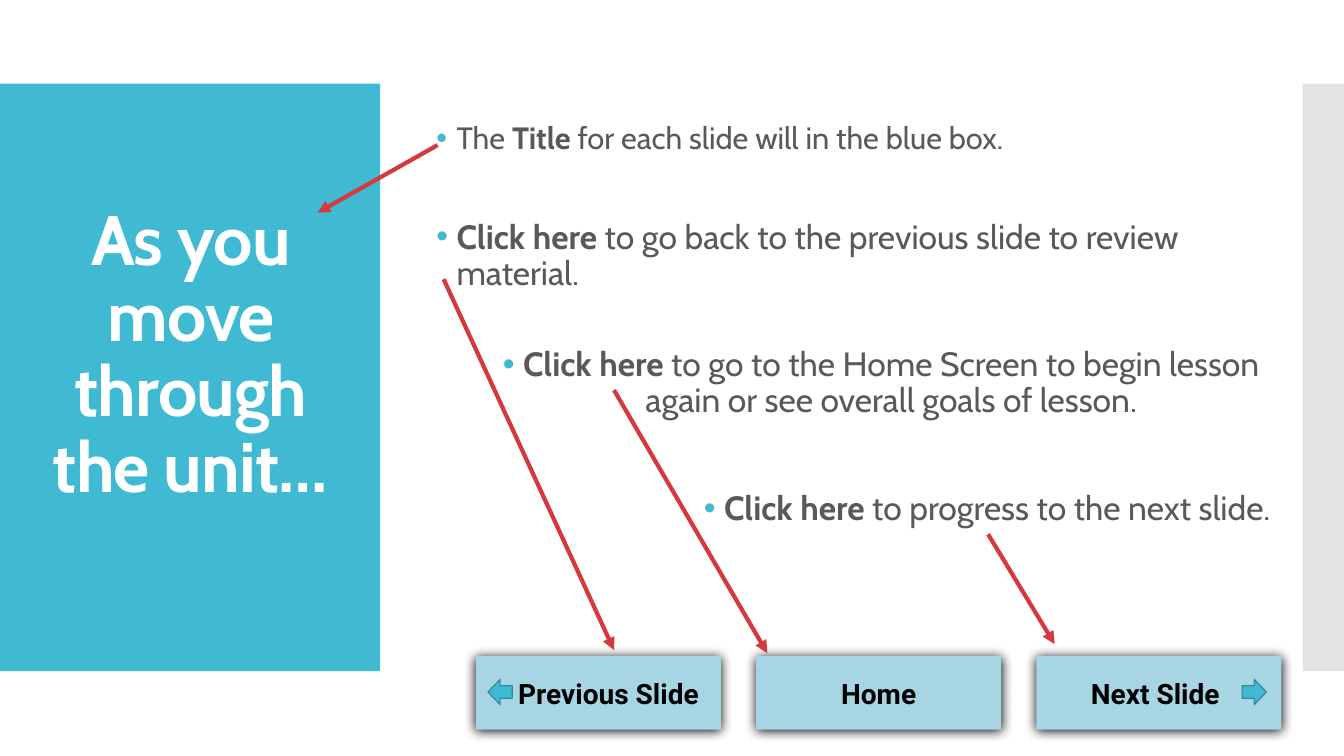
import dataclasses

import pptx
import pptx.dml.color
import pptx.enum.shapes
import pptx.enum.text
import pptx.oxml
import pptx.oxml.ns
import pptx.util

PX = 9144
KIND = pptx.enum.shapes.MSO_SHAPE
ALIGN = pptx.enum.text.PP_ALIGN
MID = pptx.enum.text.MSO_ANCHOR.MIDDLE
NS = pptx.oxml.ns.nsdecls("a")


@dataclasses.dataclass(frozen=True)
class Theme:
    blue: str = "40BAD2"
    gray: str = "C8C8C8"
    pale: str = "A7D5E3"
    edge: str = "2F8A9B"
    red: str = "D5393D"
    white: str = "FFFFFF"
    ink: str = "595959"
    black: str = "000000"
    font: str = "Cabin"
    label: str = "Roboto"
    title: int = 50
    lead: int = 22
    body: int = 24
    button: int = 20


THEME = Theme()


def px(*nums):
    return [pptx.util.Emu(num * PX) for num in nums]


def color(code):
    return pptx.dml.color.RGBColor.from_string(code)


def xml(text):
    return pptx.oxml.parse_xml(text)


def add_shape(slide, kind, box, fill):
    shape = slide.shapes.add_shape(kind, *px(*box))
    shape.shadow.inherit = False
    shape.fill.solid()
    shape.fill.fore_color.rgb = color(fill)
    shape.line.fill.background()
    return shape


def set_frame(shape, left=10, right=10):
    frame = shape.text_frame
    frame.word_wrap = True
    frame.vertical_anchor = MID
    frame.margin_left, frame.margin_right = px(left, right)
    frame.margin_top, frame.margin_bottom = px(5, 5)
    return frame


def add_run(para, text, size, font, ink, bold):
    run = para.add_run()
    run.text = text
    run.font.size = pptx.util.Pt(size)
    run.font.name = font
    run.font.bold = bold
    run.font.color.rgb = color(ink)
    return run


def add_title(slide, box, text):
    left, top, wide, high = box
    add_shape(slide, KIND.RECTANGLE, box, THEME.blue)
    area = (left + 28, top + 19, wide - 55, high - 80)
    frame = set_frame(slide.shapes.add_textbox(*px(*area)))
    para = frame.paragraphs[0]
    para.alignment = ALIGN.CENTER
    para.line_spacing = 0.9
    run = add_run(para, text, THEME.title, THEME.font, THEME.white, True)
    run._r.get_or_add_rPr().set("spc", "-60")


def add_strip(slide, box):
    strip = add_shape(slide, KIND.RECTANGLE, box, THEME.gray)
    tint = strip._element.spPr.find(".//" + pptx.oxml.ns.qn("a:srgbClr"))
    tint.append(xml(f'<a:alpha {NS} val="50000"/>'))


def add_bullet(para, indent):
    props = para._p.get_or_add_pPr()
    props.set("marL", str(indent * PX))
    props.set("indent", str(-20 * PX))
    props.append(xml(f'<a:buClr {NS}><a:srgbClr val="{THEME.blue}"/></a:buClr>'))
    props.append(xml(f'<a:buFont {NS} typeface="Arial"/>'))
    props.append(xml(f'<a:buChar {NS} char="•"/>'))


def add_body(slide, box, items):
    frame = set_frame(slide.shapes.add_textbox(*px(*box)))
    for num, (align, indent, gap, size, parts) in enumerate(items):
        para = frame.add_paragraph() if num else frame.paragraphs[0]
        para.alignment = align
        para.line_spacing = 0.9
        para.space_before = pptx.util.Pt(gap)
        add_bullet(para, indent)
        for text, bold in parts:
            add_run(para, text, size, THEME.font, THEME.ink, bold)


def add_button(slide, box, text, left, right):
    shape = add_shape(slide, KIND.RECTANGLE, box, THEME.pale)
    glow = shape._element.spPr.find(pptx.oxml.ns.qn("a:effectLst"))
    glow.append(xml(
        f'<a:outerShdw {NS} blurRad="107950" dist="12700" dir="5400000" '
        f'algn="ctr" rotWithShape="0"><a:srgbClr val="{THEME.black}"/>'
        '</a:outerShdw>'))
    para = set_frame(shape, left, right).paragraphs[0]
    para.alignment = ALIGN.CENTER
    add_run(para, text, THEME.button, THEME.label, THEME.black, True)


def add_icon(slide, kind, left, top):
    icon = add_shape(slide, kind, (left, top, 24, 25), THEME.blue)
    icon.line.color.rgb = color(THEME.edge)
    icon.line.width = pptx.util.Pt(0.85)


def add_nav(slide, box):
    left, top, wide, high = box
    size = 243
    step = (wide - size) // 2
    labels = [("Previous Slide", 30, 10), ("Home", 10, 10), ("Next Slide", 10, 17)]
    for num, (text, start, end) in enumerate(labels):
        area = (left + num * step, top, size, high)
        add_button(slide, area, text, start, end)
    add_icon(slide, KIND.LEFT_ARROW, left + 12, top + 23)
    add_icon(slide, KIND.RIGHT_ARROW, left + wide - 39, top + 23)


def add_arrow(slide, ends):
    kind = pptx.enum.shapes.MSO_CONNECTOR.STRAIGHT
    line = slide.shapes.add_connector(kind, *px(*ends))
    line.line.color.rgb = color(THEME.red)
    line.line.width = pptx.util.Pt(3)
    line.line._get_or_add_ln().append(xml(f'<a:tailEnd {NS} type="triangle"/>'))
    line._element.spPr.append(xml(f'<a:effectLst {NS}/>'))


def main():
    deck = pptx.Presentation()
    deck.slide_width, deck.slide_height = px(1333, 750)
    slide = deck.slides.add_slide(deck.slide_layouts[6])
    add_title(slide, (0, 83, 377, 583), "As you move through the unit…")
    add_strip(slide, (1292, 83, 41, 583))
    click = ("Click here ", True)
    add_body(slide, (423, 18, 847, 609), [
        (ALIGN.LEFT, 20, 0, THEME.lead, [
            ("The ", False), ("Title ", True),
            ("for each slide will in the blue box.", False)]),
        (ALIGN.LEFT, 20, 46, THEME.body, [
            click, ("to go back to the previous slide to review material.", False)]),
        (ALIGN.CENTER, 75, 39, THEME.body, [
            click, ("to go to the Home Screen to begin lesson again "
                    "or see overall goals of lesson.", False)]),
        (ALIGN.RIGHT, 20, 51, THEME.body, [
            click, ("to progress to the next slide.", False)]),
    ])
    add_nav(slide, (472, 651, 799, 73))
    for ends in [(980, 530, 1046, 639), (440, 277, 609, 645),
                 (609, 387, 761, 648), (434, 144, 315, 211)]:
        add_arrow(slide, ends)
    deck.save("out.pptx")


if __name__ == "__main__":
    main()
